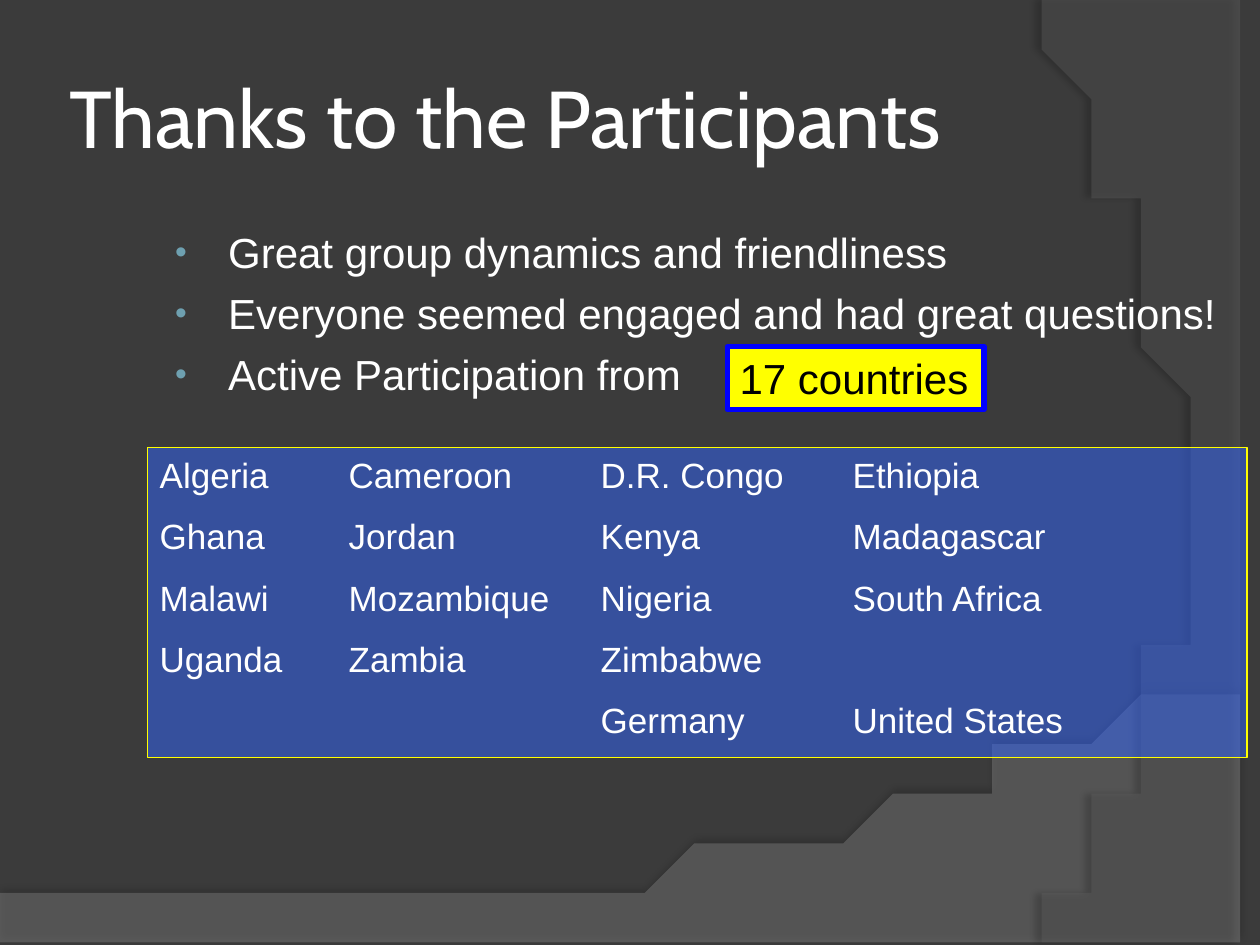
from lxml.etree import SubElement
from pptx import Presentation
from pptx.dml.color import RGBColor as Color
from pptx.enum.shapes import MSO_SHAPE as Preset
from pptx.enum.text import MSO_ANCHOR as Anchor, PP_ALIGN as Align
from pptx.oxml.ns import qn
from pptx.util import Cm, Pt

COLORS = {
    "background": "3B3B3B", "wave": "7F7F7F", "arc": "5E5E5E",
    "text": "FFFFFF", "bullet": "6EA0B0", "panel": "3366FF",
    "panel line": "FFFF00", "badge": "FFFF00", "badge line": "0000FF",
    "badge text": "000000", "shadow": "000000",
}
COUNTRIES = [
    ["Algeria", "Cameroon", "D.R. Congo", "Ethiopia"],
    ["Ghana", "Jordan", "Kenya", "Madagascar"],
    ["Malawi", "Mozambique", "Nigeria", "South Africa"],
    ["Uganda", "Zambia", "Zimbabwe"],
    ["", "", "Germany", "United States"],
]
REMARKS = [
    "Great group dynamics and friendliness",
    "Everyone seemed engaged and had great questions!",
    "Active Participation from",
]


def color(name):
    return Color.from_string(COLORS[name])


def bezier(start, first, second, end, steps=48):
    def point(t):
        weights = ((1 - t) ** 3, 3 * t * (1 - t) ** 2, 3 * t * t * (1 - t), t ** 3)
        corners = (start, first, second, end)
        return tuple(sum(w * c[axis] for w, c in zip(weights, corners)) for axis in (0, 1))
    return [point(step / steps) for step in range(steps + 1)]


class Deck:
    """Slide style and the methods that draw each kind of element."""

    def __init__(self, presentation):
        self.font = "Arial"
        self.slide = presentation.slides.add_slide(presentation.slide_layouts[6])
        fill = self.slide.background.fill
        fill.solid()
        fill.fore_color.rgb = color("background")

    def paint(self, shape, name, opacity=100):
        shape.shadow.inherit = False
        shape.fill.solid()
        shape.fill.fore_color.rgb = color(name)
        if opacity < 100:
            solid = shape._element.spPr.find(qn("a:solidFill"))
            SubElement(solid[0], qn("a:alpha"), val=str(opacity * 1000))

    def swoosh(self, points, name, opacity, shadow_opacity, distance, angle):
        builder = self.slide.shapes.build_freeform(*points[0], scale=Cm(1))
        builder.add_line_segments(points[1:], close=True)
        shape = builder.convert_to_shape()
        self.paint(shape, name, opacity)
        shape.line.fill.background()
        effects = shape._element.spPr.find(qn("a:effectLst"))
        shadow = SubElement(effects, qn("a:outerShdw"), blurRad=str(Pt(4)),
                            dist=str(Pt(distance)), dir=str(angle * 60000), rotWithShape="0")
        value = SubElement(shadow, qn("a:srgbClr"), val=COLORS["shadow"])
        SubElement(value, qn("a:alpha"), val=str(shadow_opacity * 1000))

    def box(self, area, fill, line, width, opacity=100):
        shape = self.slide.shapes.add_shape(Preset.RECTANGLE, *map(Cm, area))
        self.paint(shape, fill, opacity)
        shape.line.color.rgb = color(line)
        shape.line.width = Pt(width)
        return shape

    def text_box(self, area):
        return self.slide.shapes.add_textbox(*map(Cm, area))

    def add_text(self, shape, lines, size, name="text", font=None, gap=0,
                 anchor=Anchor.TOP, wrap=True):
        frame = shape.text_frame
        frame.word_wrap = wrap
        frame.vertical_anchor = anchor
        for index, line in enumerate(lines):
            paragraph = frame.add_paragraph() if index else frame.paragraphs[0]
            paragraph.alignment = Align.LEFT
            paragraph.space_before = Pt(gap if index else 0)
            run = paragraph.add_run()
            run.text = line
            run.font.name = font or self.font
            run.font.size = Pt(size)
            run.font.color.rgb = color(name)
        return frame

    def add_bullets(self, frame, indent, hanging):
        for paragraph in frame.paragraphs:
            properties = paragraph._p.get_or_add_pPr()
            properties.set("marL", str(Cm(indent)))
            properties.set("indent", str(-Cm(hanging)))
            tint = SubElement(properties, qn("a:buClr"))
            SubElement(tint, qn("a:srgbClr"), val=COLORS["bullet"])
            SubElement(properties, qn("a:buSzPct"), val="80000")
            SubElement(properties, qn("a:buFont"), typeface=self.font)
            SubElement(properties, qn("a:buChar"), char="•")

    def add_tabs(self, frame, stops):
        for paragraph in frame.paragraphs:
            tabs = SubElement(paragraph._p.get_or_add_pPr(), qn("a:tabLst"))
            for stop in stops:
                SubElement(tabs, qn("a:tab"), pos=str(Cm(stop)), algn="l")


def main():
    presentation = Presentation()
    presentation.slide_width, presentation.slide_height = Cm(25.4), Cm(19.05)
    deck = Deck(presentation)

    wave = bezier((25.4, 13.21), (14.2, 18.52), (9.93, 18.26), (0, 17.91))
    deck.swoosh([(0, 19.08), (25.4, 19.08)] + wave, "wave", 45, 35, 3.5, 270)
    arc = bezier((20.85, 19.05), (23.75, 15.72), (25.86, 7.62), (20.32, 0))
    deck.swoosh([(25.4, 0.05), (25.4, 19.05)] + arc, "arc", 40, 45, 4, 180)

    title = deck.text_box((1.27, 0.76, 20.75, 3.18))
    frame = deck.add_text(title, ["Thanks to the Participants"], 46, font="Cabin",
                          anchor=Anchor.MIDDLE)
    frame.margin_left = frame.margin_right = Cm(0.13)

    panel = deck.box((2.97, 9.02, 22.17, 6.25), "panel", "panel line", 0.75, opacity=50)
    frame = deck.add_text(panel, ["\t".join(row) for row in COUNTRIES], 20, gap=11)
    deck.add_tabs(frame, (3.81, 8.89, 13.97))

    remarks = deck.text_box((3.18, 4.45, 21.59, 3.81))
    frame = deck.add_text(remarks, REMARKS, 24, gap=6)
    deck.add_bullets(frame, indent=1.17, hanging=1.07)

    badge = deck.box((14.66, 6.99, 5.18, 1.27), "badge", "badge line", 3)
    deck.add_text(badge, ["17 countries"], 24, "badge text", wrap=False)

    presentation.save("out.pptx")


if __name__ == "__main__":
    main()
